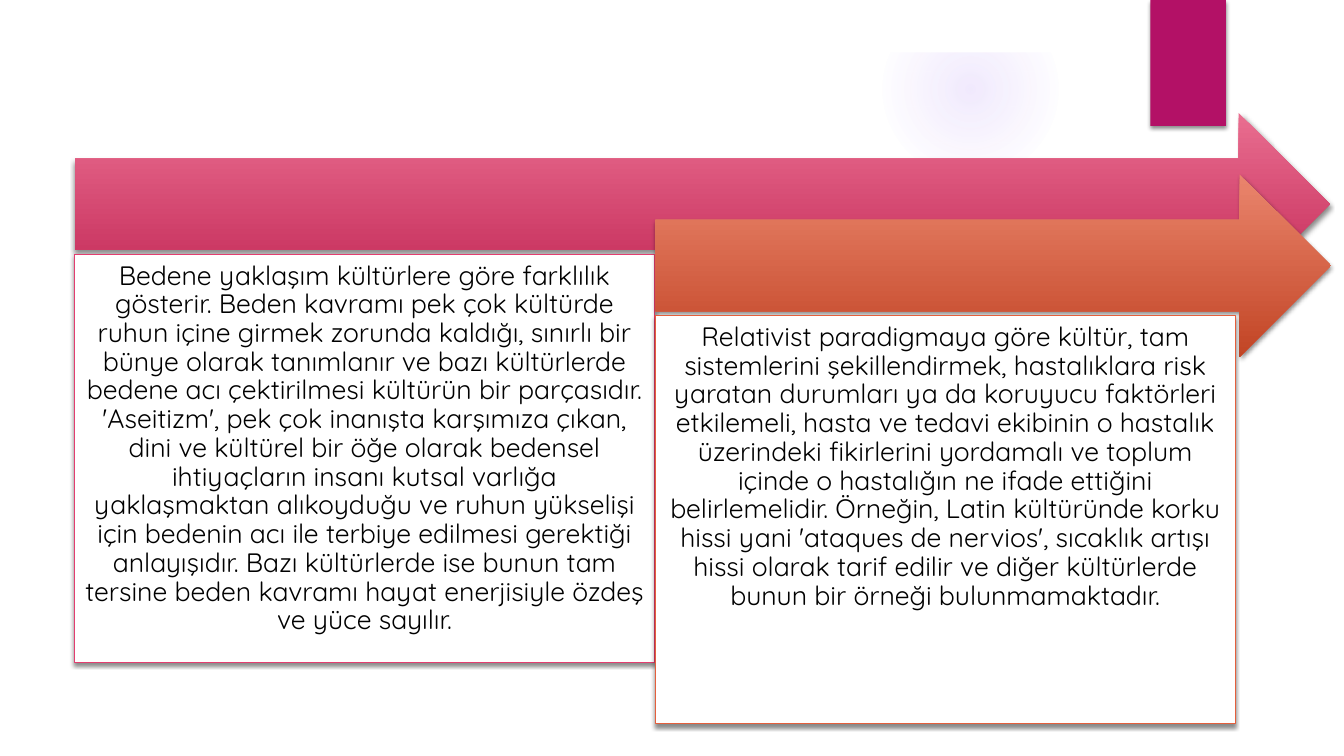
"""Build a slide with two overlapping arrows and their text panels."""
from pptx import Presentation
from pptx.dml.color import RGBColor
from pptx.enum.shapes import MSO_SHAPE
from pptx.enum.text import MSO_ANCHOR, PP_ALIGN
from pptx.oxml import parse_xml
from pptx.util import Inches, Pt

COLORS = {
    "white": "FFFFFF",
    "black": "000000",
    "tab": "B31166",
    "glow": "9B6BF2",
}
NS = 'xmlns:a="http://schemas.openxmlformats.org/drawingml/2006/main"'
SHADOW = (
    f'<a:effectLst {NS}><a:outerShdw blurRad="38100" dist="25400" dir="5400000" '
    f'rotWithShape="0"><a:srgbClr val="{COLORS["black"]}"><a:alpha val="45000"/>'
    '</a:srgbClr></a:outerShdw></a:effectLst>'
)
PANELS = [
    {
        "left": 0.74, "top": 1.12, "arrow_width": 12.45,
        "gradient": ("E96E90", "C22655"), "line": "E33D6F",
        "text": "Bedene yaklaşım kültürlere göre farklılık gösterir. Beden kavramı "
                "pek çok kültürde ruhun içine girmek zorunda kaldığı, sınırlı bir "
                "bünye olarak tanımlanır ve bazı kültürlerde bedene acı çektirilmesi "
                "kültürün bir parçasıdır. 'Aseitizm', pek çok inanışta karşımıza "
                "çıkan, dini ve kültürel bir öğe olarak bedensel ihtiyaçların insanı "
                "kutsal varlığa yaklaşmaktan alıkoyduğu ve ruhun yükselişi için "
                "bedenin acı ile terbiye edilmesi gerektiği anlayışıdır. Bazı "
                "kültürlerde ise bunun tam tersine beden kavramı hayat enerjisiyle "
                "özdeş ve yüce sayılır.",
    },
    {
        "left": 6.5, "top": 1.73, "arrow_width": 6.7,
        "gradient": ("EA856D", "C24525"), "line": "E45F3C",
        "text": "Relativist paradigmaya göre kültür, tam sistemlerini şekillendirmek, "
                "hastalıklara risk yaratan durumları ya da koruyucu faktörleri "
                "etkilemeli, hasta ve tedavi ekibinin o hastalık üzerindeki "
                "fikirlerini yordamalı ve toplum içinde o hastalığın ne ifade "
                "ettiğini belirlemelidir. Örneğin, Latin kültüründe korku hissi yani "
                "'ataques de nervios', sıcaklık artışı hissi olarak tarif edilir ve "
                "diğer kültürlerde bunun bir örneği bulunmamaktadır.",
    },
]

prs = Presentation()
prs.slide_width, prs.slide_height = Inches(13.33), Inches(7.5)
s = prs.slides.add_slide(prs.slide_layouts[6])


def add_shape(kind, left, top, width, height, color=None, shadow=True):
    sp = s.shapes.add_shape(
        kind, Inches(left), Inches(top), Inches(width), Inches(height))
    sp.line.fill.background()
    sp.shadow.inherit = False
    if color:
        sp.fill.solid()
        sp.fill.fore_color.rgb = RGBColor.from_string(color)
    if shadow:
        spPr = sp._element.spPr
        spPr.replace(spPr.find("{*}effectLst"), parse_xml(SHADOW))
    return sp


glow = add_shape(MSO_SHAPE.OVAL, 8.75, 0.01, 1.75, 1.75, shadow=False)
glow.fill.background()
stops = "".join(
    f'<a:gs pos="{pos}000"><a:srgbClr val="{COLORS["glow"]}">'
    f'<a:alpha val="{alpha}000"/></a:srgbClr></a:gs>'
    for pos, alpha in ((0, 14), (36, 7), (73, 0)))
spPr = glow._element.spPr
spPr.replace(spPr.find("{*}noFill"), parse_xml(
    f'<a:gradFill {NS}><a:gsLst>{stops}</a:gsLst><a:path path="circle">'
    '<a:fillToRect l="50000" t="50000" r="50000" b="50000"/></a:path></a:gradFill>'))

add_shape(MSO_SHAPE.RECTANGLE, 0, 0, 13.33, 0.52, COLORS["white"], shadow=False)
add_shape(MSO_SHAPE.RECTANGLE, 11.41, 0, 0.75, 1.25, COLORS["tab"])

for panel in PANELS:
    arrow = add_shape(MSO_SHAPE.RIGHT_ARROW, panel["left"], panel["top"],
                      panel["arrow_width"], 1.81)
    arrow.fill.gradient()
    arrow.fill.gradient_angle = 270
    for stop, color, pos in zip(arrow.fill.gradient_stops, panel["gradient"], (0, 1)):
        stop.color.rgb = RGBColor.from_string(color)
        stop.position = pos

    box = add_shape(MSO_SHAPE.RECTANGLE, panel["left"], panel["top"] + 1.4,
                    5.75, 4.05, COLORS["white"])
    box.line.color.rgb = RGBColor.from_string(panel["line"])
    box.line.width = Pt(0.75)
    tf = box.text_frame
    tf.word_wrap = True
    tf.vertical_anchor = MSO_ANCHOR.TOP
    tf.margin_left = tf.margin_right = tf.margin_top = tf.margin_bottom = Inches(0.08)
    p = tf.paragraphs[0]
    p.text = panel["text"]
    p.alignment = PP_ALIGN.CENTER
    p.line_spacing = 0.9
    p.font.name = "Quicksand"
    p.font.size = Pt(19)
    p.font.color.rgb = RGBColor.from_string(COLORS["black"])

prs.save("out.pptx")
